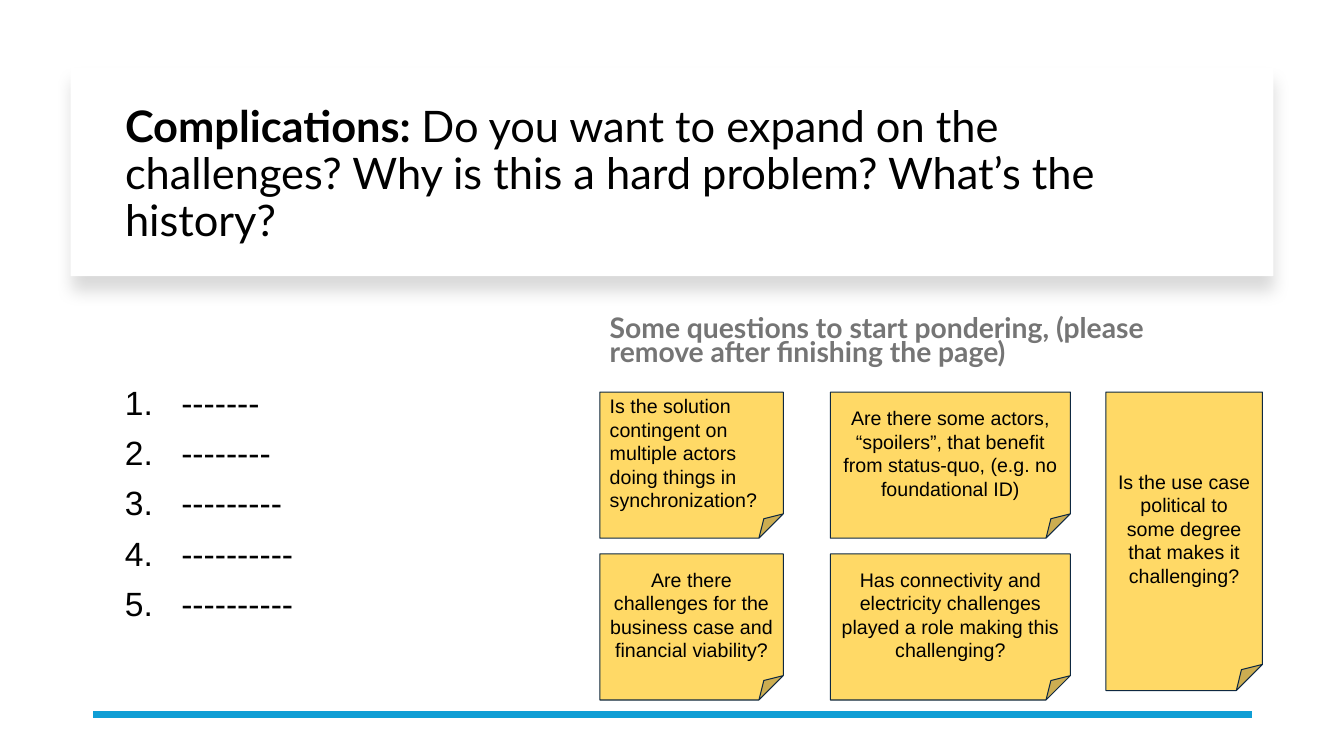
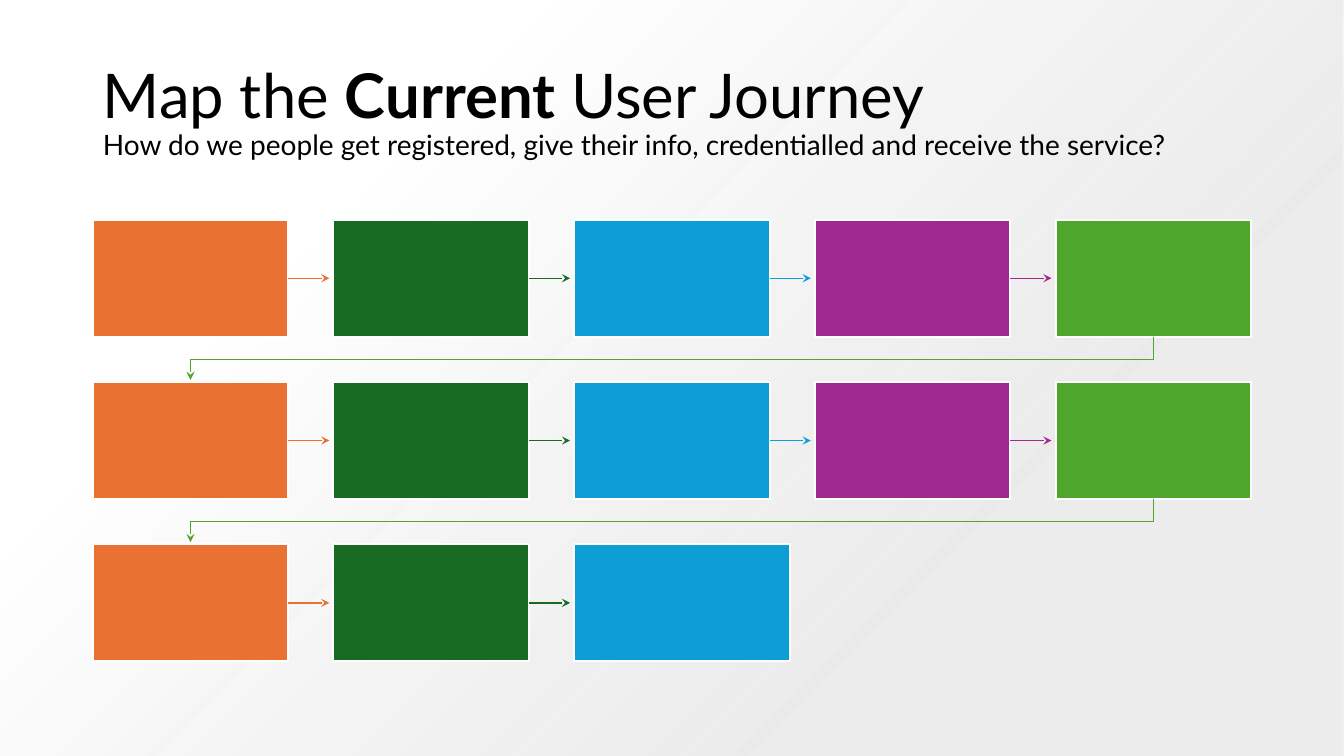
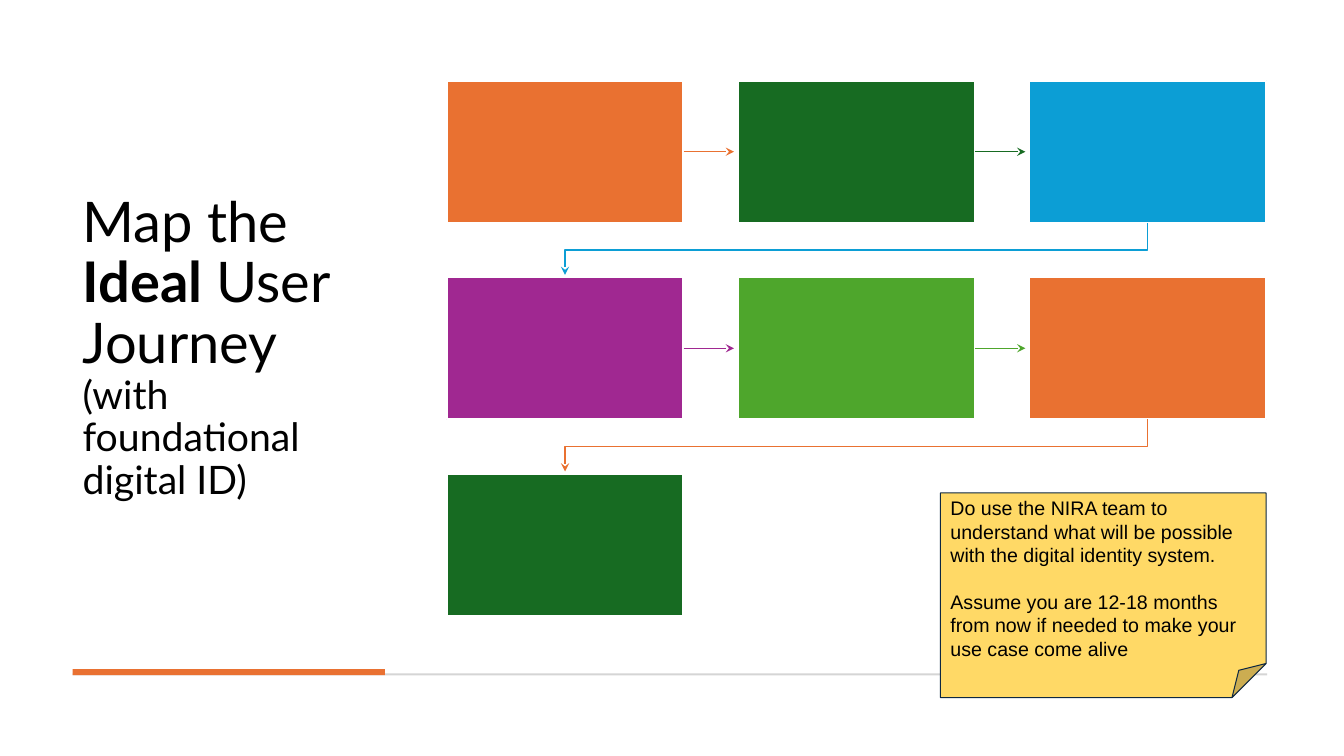
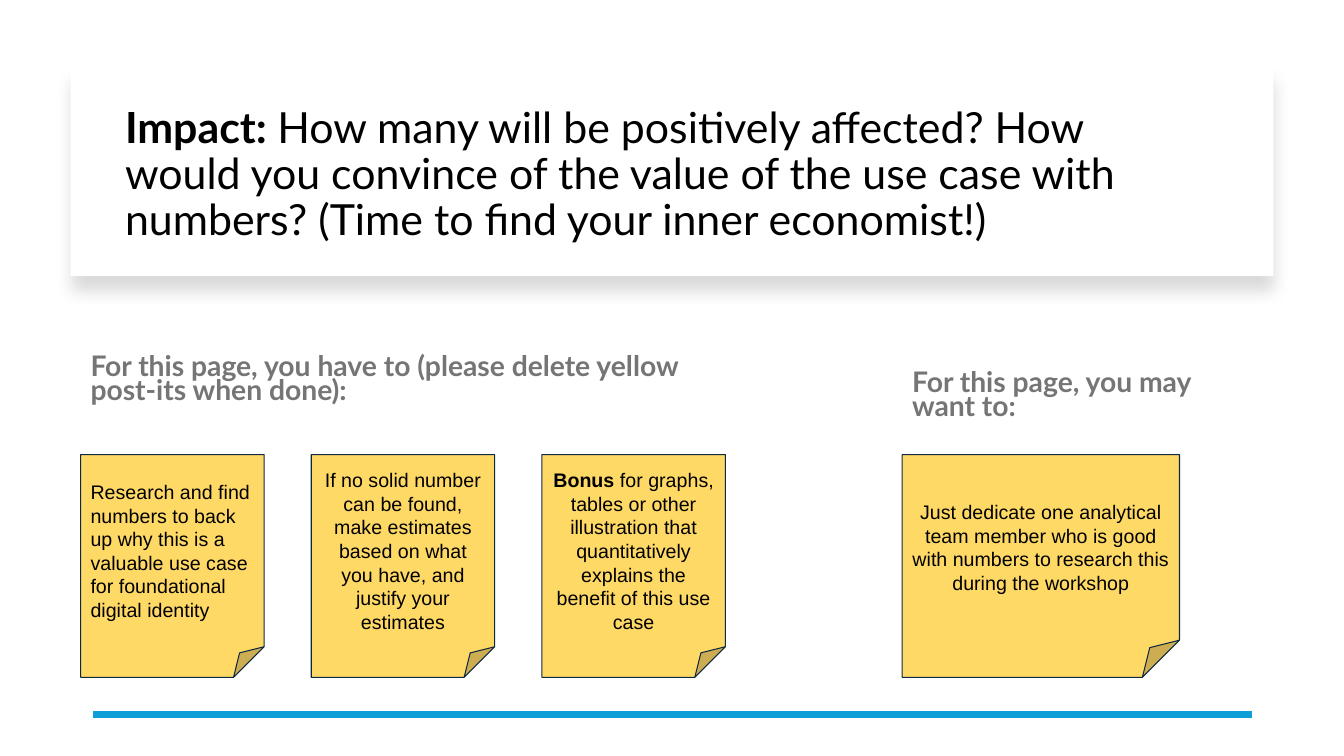
"""Build four workshop pages: complications, two user journeys and impact."""
from dataclasses import dataclass
from itertools import cycle
from typing import NamedTuple

from lxml.etree import SubElement
from pptx import Presentation
from pptx.dml.color import RGBColor
from pptx.enum.shapes import MSO_CONNECTOR as Link, MSO_SHAPE as Preset
from pptx.enum.text import MSO_ANCHOR as Anchor, MSO_AUTO_SIZE as AutoSize, PP_ALIGN as Align
from pptx.oxml import parse_xml
from pptx.oxml.ns import nsdecls, qn
from pptx.util import Inches, Pt

WIDTH, HEIGHT = Inches(13.333), Inches(7.5)


@dataclass(frozen=True)
class Theme:
    """Colours, fonts and type sizes of the deck."""
    ink: str = "000000"
    paper: str = "FFFFFF"
    muted: str = "757575"
    haze: str = "E8E8E8"
    hairline: str = "D5D5D5"
    rule: str = "0F9ED5"
    accent: str = "E97132"
    note: str = "FFD966"
    note_edge: str = "0E2841"
    steps: tuple[str, ...] = ("E97131", "176B22", "0C9ED5", "A02891", "4EA62C")
    display: str = "Lato"
    body: str = "Arial"
    card_title: float = 31
    heading: float = 20.2
    list_item: float = 24
    note_text: float = 14


THEME = Theme()


class Span(NamedTuple):
    """A stretch of text, with its own size when one is given."""
    text: str
    bold: bool = False
    size: float = 0


class Box(NamedTuple):
    """A rectangle in hundredths of the slide's width and height."""
    left: float
    top: float
    width: float
    height: float

    def lengths(self) -> tuple[int, int, int, int]:
        """Return left, top, width and height as slide lengths."""
        return across(self.left), down(self.top), across(self.width), down(self.height)


class Note(NamedTuple):
    """A sticky note: its place, paragraphs and alignment."""
    box: Box
    paras: tuple[tuple[Span, ...], ...]
    align: Align = Align.CENTER


@dataclass(frozen=True)
class Journey:
    """A grid of steps, read row by row."""
    left: float
    top: float
    width: float
    height: float
    column_pitch: float
    row_pitch: float
    columns: int
    count: int
    last_width: float

    def step(self, index: int) -> Box:
        """Return the box of one step."""
        row, column = divmod(index, self.columns)
        width = self.last_width if index == self.count - 1 else self.width
        return Box(self.left + column * self.column_pitch,
                   self.top + row * self.row_pitch, width, self.height)


CARD = Box(5.25, 8.93, 89.5, 27.6)
CARD_TITLE = Box(8.55, 11.87, 81.53, 22.67)
CURRENT = Journey(6.9, 29.07, 14.55, 15.47, 17.91, 21.47, 5, 13, 16.05)
IDEAL = Journey(33.23, 10.67, 17.63, 18.8, 21.68, 26, 3, 7, 17.63)
ARROW_GAP = 0.3
NOTE_WIDTH = 13.65
NOTE_PITCH = 17.16


def across(share: float) -> int:
    """Turn hundredths of the slide's width into a length."""
    return round(WIDTH * share / 100)


def down(share: float) -> int:
    """Turn hundredths of the slide's height into a length."""
    return round(HEIGHT * share / 100)


def rgb(code: str) -> RGBColor:
    """Return the colour for a hexadecimal code."""
    return RGBColor.from_string(code)


def style(para, font: str, size: float, color: str, bold: bool | None = None) -> None:
    """Set the font that all runs of a paragraph share."""
    para.font.name, para.font.size = font, Pt(size)
    para.font.color.rgb, para.font.bold = rgb(color), bold


def add_spans(para, spans: tuple[Span, ...]) -> None:
    """Write spans, with a line break at each newline."""
    for span in spans:
        for number, line in enumerate(span.text.split("\n")):
            if number:
                para.add_line_break()
            if line:
                run = para.add_run()
                run.text = line
                run.font.bold = span.bold or None
                run.font.size = Pt(span.size) if span.size else None


def frame_of(shape, margin: float = 0.05):
    """Prepare a wrapped, middle-anchored text frame."""
    frame = shape.text_frame
    frame.word_wrap, frame.auto_size = True, AutoSize.NONE
    frame.vertical_anchor = Anchor.MIDDLE
    frame.margin_left = frame.margin_right = Inches(0.1)
    frame.margin_top = frame.margin_bottom = Inches(margin)
    return frame


def add_page(deck, title: Box, size: float, *spans: Span, card: bool = False):
    """Add a title-only page and format its title."""
    page = deck.slides.add_slide(deck.slide_layouts[5])
    shape = page.shapes.title
    shape.left, shape.top, shape.width, shape.height = title.lengths()
    para = frame_of(shape).paragraphs[0]
    para.alignment, para.line_spacing = Align.LEFT, 0.9
    style(para, THEME.display, size, THEME.ink)
    add_spans(para, spans)
    if card:
        add_card(page)
    return page


def add_panel(page, box: Box, fill: str, edge: str = "", weight: float = 0,
              preset: Preset = Preset.RECTANGLE):
    """Add a flat filled shape, outlined when an edge colour is given."""
    shape = page.shapes.add_shape(preset, *box.lengths())
    shape.shadow.inherit = False
    shape.fill.solid()
    shape.fill.fore_color.rgb = rgb(fill)
    if edge:
        shape.line.color.rgb, shape.line.width = rgb(edge), Pt(weight)
    else:
        shape.line.fill.background()
    return shape


def send_to_back(page, shape) -> None:
    """Put a shape behind all others on its page."""
    page.shapes._spTree.insert(2, shape._element)


def add_card(page) -> None:
    """Add the shadowed title card and the bottom rule."""
    card = add_panel(page, CARD, THEME.paper)
    effects = card._element.spPr.find(qn("a:effectLst"))
    shadow = SubElement(effects, qn("a:outerShdw"), blurRad=str(Pt(11)), dist=str(Pt(10)),
                        dir="5400000", algn="t", rotWithShape="0")
    color = SubElement(shadow, qn("a:srgbClr"), val=THEME.ink)
    SubElement(color, qn("a:alpha"), val="15000")
    send_to_back(page, card)
    add_line(page, (93.15, 94.53), (6.9, 94.53), THEME.rule, 4.5)


def add_line(page, start: tuple[float, float], end: tuple[float, float],
             color: str, weight: float):
    """Add a straight line without a shadow."""
    line = page.shapes.add_connector(Link.STRAIGHT, across(start[0]), down(start[1]),
                                     across(end[0]), down(end[1]))
    line.line.color.rgb, line.line.width = rgb(color), Pt(weight)
    SubElement(line._element.spPr, qn("a:effectLst"))
    return line


def add_arrowhead(shape) -> None:
    """Put a stealth arrowhead at the end of a line."""
    SubElement(shape._element.spPr.find(qn("a:ln")), qn("a:tailEnd"), type="stealth")


def add_turn(page, origin: Box, target: Box, color: str) -> None:
    """Add the bent arrow from the end of a row to the start of the next."""
    start_x, end_x = (across(box.left + box.width / 2) for box in (origin, target))
    bottom = origin.top + origin.height
    middle = down((bottom + target.top) / 2)
    outline = page.shapes.build_freeform(start_x, down(bottom))
    outline.add_line_segments([(start_x, middle), (end_x, middle),
                               (end_x, down(target.top - ARROW_GAP))], close=False)
    turn = outline.convert_to_shape()
    turn.shadow.inherit = False
    turn.fill.background()
    turn.line.color.rgb, turn.line.width = rgb(color), Pt(1)
    add_arrowhead(turn)


def add_journey(page, journey: Journey) -> None:
    """Draw the steps of a journey and the arrows between them."""
    for index, color in zip(range(journey.count), cycle(THEME.steps)):
        box = journey.step(index)
        step = add_panel(page, box, color, THEME.paper, 1.5)
        if index == journey.count - 1:
            continue
        target = journey.step(index + 1)
        if target.top > box.top:
            add_turn(page, box, target, color)
        else:
            middle = box.top + box.height / 2
            arrow = add_line(page, (box.left + box.width, middle),
                             (target.left - ARROW_GAP, middle), color, 1)
            arrow.begin_connect(step, 3)
            add_arrowhead(arrow)


def add_note(page, note: Note) -> None:
    """Add a yellow sticky note."""
    shape = add_panel(page, note.box, THEME.note, THEME.note_edge, 0.75, Preset.FOLDED_CORNER)
    frame = frame_of(shape, 0.1)
    for number, spans in enumerate(note.paras):
        para = frame.add_paragraph() if number else frame.paragraphs[0]
        para.alignment = note.align
        para.space_before = Pt(16.5 if number else 0)
        style(para, THEME.body, THEME.note_text, THEME.ink)
        add_spans(para, spans)


def add_heading(page, box: Box, text: str) -> None:
    """Add a grey heading above the notes."""
    para = frame_of(page.shapes.add_textbox(*box.lengths())).paragraphs[0]
    para.text, para.line_spacing = text, 0.7
    style(para, THEME.display, THEME.heading, THEME.muted, True)


def add_numbered_list(page, box: Box, items: list[str]) -> None:
    """Add an automatically numbered list."""
    frame = frame_of(page.shapes.add_textbox(*box.lengths()))
    for number, item in enumerate(items):
        para = frame.add_paragraph() if number else frame.paragraphs[0]
        para.text = item
        properties = para._p.get_or_add_pPr()
        properties.set("marL", str(Inches(0.56)))
        properties.set("indent", str(-Inches(0.56)))
        SubElement(properties, qn("a:buAutoNum"), type="arabicPeriod")
        para.line_spacing, para.space_before = 0.9, Pt(10 if number else 0)
        style(para, THEME.body, THEME.list_item, THEME.ink)


def add_haze(page) -> None:
    """Cover the page with a gradient that darkens to the lower right."""
    haze = add_panel(page, Box(0, 0, 100, 100), THEME.paper)
    stops = "".join(
        f'<a:gs pos="{place}000"><a:srgbClr val="{color}"><a:alpha val="{alpha}000"/>'
        "</a:srgbClr></a:gs>"
        for place, color, alpha in ((0, THEME.haze, 84), (28, THEME.haze, 84),
                                    (74, THEME.paper, 100), (100, THEME.paper, 100)))
    gradient = parse_xml(
        f'<a:gradFill {nsdecls("a")} rotWithShape="1"><a:gsLst>{stops}</a:gsLst>'
        '<a:path path="circle"><a:fillToRect l="100000" t="100000"/></a:path></a:gradFill>')
    properties = haze._element.spPr
    properties.replace(properties.find(qn("a:solidFill")), gradient)
    send_to_back(page, haze)


def plain(text: str) -> tuple[tuple[Span, ...], ...]:
    """Return one paragraph of unmarked text."""
    return ((Span(text),),)


def add_complications(deck) -> None:
    """Add the page on complications."""
    page = add_page(deck, CARD_TITLE, THEME.card_title, Span("Complications: ", True),
                    Span("Do you want to expand on the challenges? Why is this a hard "
                         "problem? What’s the history?"), card=True)
    add_numbered_list(page, Box(8.55, 44, 81.53, 45.6),
                      ["-" * count for count in (7, 8, 9, 10, 10)])
    left, top, height, row_pitch = 44.63, 51.87, 19.33, 21.4
    add_heading(page, Box(left, 37.6, 46.88, 15.73),
                "Some questions to start pondering, (please remove after finishing the page)")
    narrow = Box(left, top, NOTE_WIDTH, height)
    wide = Box(left + NOTE_PITCH, top, 17.85, height)
    for note in (
        Note(narrow, plain("Is the solution contingent on multiple actors doing things in "
                           "synchronization?"), Align.LEFT),
        Note(wide, plain("Are there some actors, “spoilers”, that benefit from status-quo, "
                         "(e.g. no foundational ID)")),
        Note(narrow._replace(top=top + row_pitch),
             plain("Are there challenges for the business case and financial viability?")),
        Note(wide._replace(top=top + row_pitch),
             plain("Has connectivity and electricity challenges played a role making this "
                   "challenging?")),
        Note(Box(82.28, top, 11.65, 39.47),
             plain("Is the use case political to some degree that makes it challenging?")),
    ):
        add_note(page, note)


def add_current_journey(deck) -> None:
    """Add the page for the current user journey."""
    page = add_page(deck, Box(6.9, 5.33, 86.25, 19.33), 44, Span("Map the "),
                    Span("Current", True), Span(" User Journey\n"),
                    Span("How do we people get registered, give their info, credentialled "
                         "and receive the service?", size=20))
    add_haze(page)
    add_journey(page, CURRENT)


def add_ideal_journey(deck) -> None:
    """Add the page for the ideal user journey."""
    page = add_page(deck, Box(5.4, 6.27, 23.25, 79.6), 40, Span("Map the "),
                    Span("Ideal", True), Span(" User Journey "),
                    Span("(with foundational digital ID)", size=28))
    add_panel(page, Box(5.4, 89.07, 88.88, 0.27), THEME.hairline)
    add_panel(page, Box(5.4, 88.53, 23.25, 0.8), THEME.accent)
    add_journey(page, IDEAL)
    advice = (plain("Do use the NIRA team to understand what will be possible with the "
                    "digital identity system.")
              + plain("Assume you are 12-18 months from now if needed to make your use "
                      "case come alive"))
    add_note(page, Note(Box(69.98, 65.2, 24.23, 27.07), advice, Align.LEFT))


def add_impact(deck) -> None:
    """Add the page on impact."""
    page = add_page(deck, CARD_TITLE, THEME.card_title - 0.4, Span("Impact: ", True),
                    Span("How many will be positively affected? How would you convince of "
                         "the value of the use case with numbers? (Time to find your inner "
                         "economist!)"), card=True)
    add_heading(page, Box(6, 42.53, 48, 15.73),
                "For this page, you have to (please delete yellow post-its when done):")
    add_heading(page, Box(67.13, 44.67, 23.18, 15.73), "For this page, you may want to:")
    first = Box(6, 60.13, NOTE_WIDTH, 29.47)
    for note in (
        Note(first, plain("Research and find numbers to back up why this is a valuable use "
                          "case for foundational digital identity"), Align.LEFT),
        Note(first._replace(left=first.left + NOTE_PITCH),
             plain("If no solid number can be found, make estimates based on what you "
                   "have, and justify your estimates")),
        Note(first._replace(left=first.left + 2 * NOTE_PITCH),
             ((Span("Bonus", True),
               Span(" for graphs, tables or other illustration that quantitatively explains "
                    "the benefit of this use case")),)),
        Note(first._replace(left=67.13, width=20.63),
             plain("Just dedicate one analytical team member who is good with numbers to "
                   "research this during the workshop")),
    ):
        add_note(page, note)


def main() -> None:
    """Build and save the deck."""
    deck = Presentation()
    deck.slide_width, deck.slide_height = WIDTH, HEIGHT
    for add in (add_complications, add_current_journey, add_ideal_journey, add_impact):
        add(deck)
    deck.save("out.pptx")


if __name__ == "__main__":
    main()
